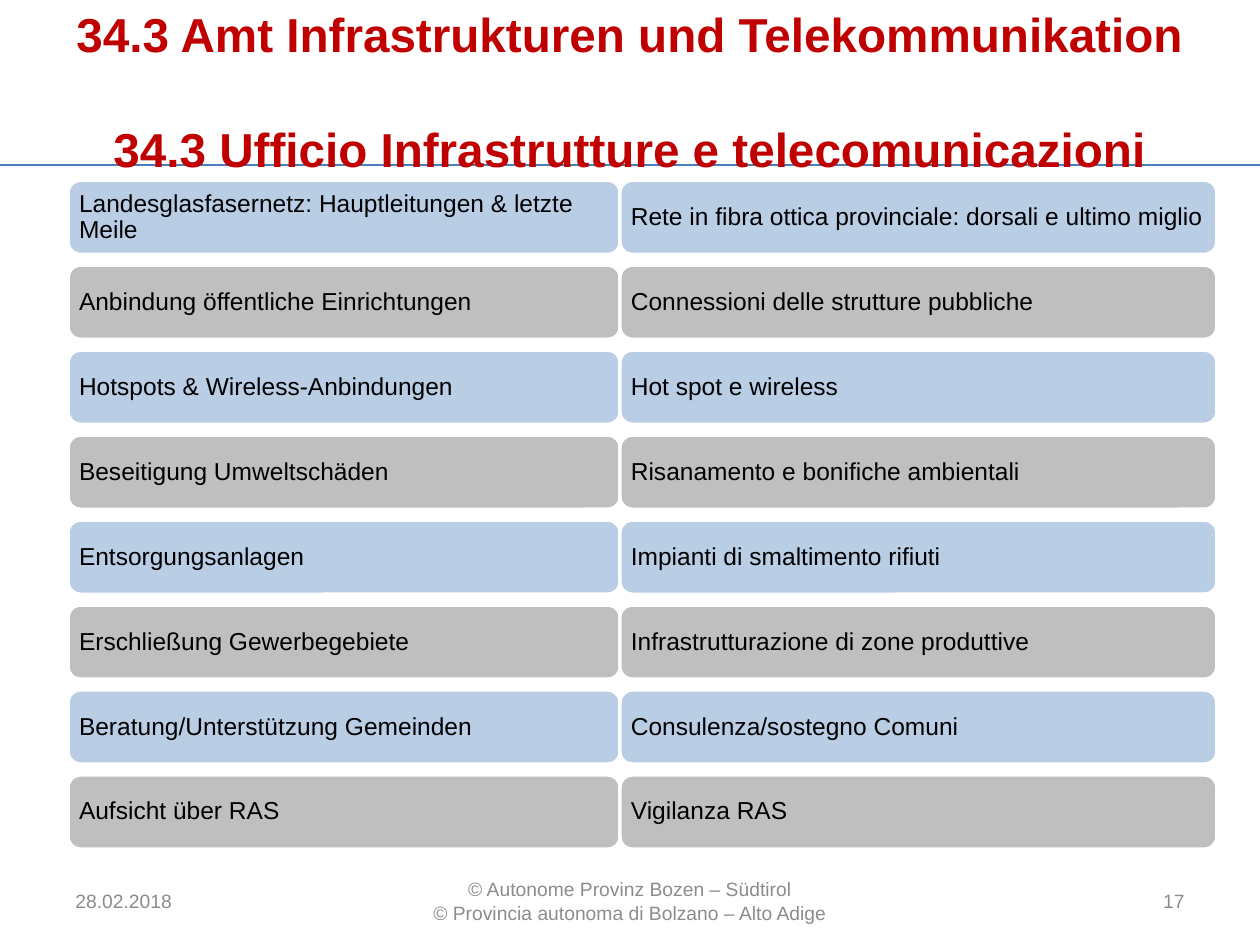
from pptx import Presentation
from pptx.dml.color import RGBColor
from pptx.enum.shapes import MSO_CONNECTOR, MSO_SHAPE
from pptx.enum.text import MSO_ANCHOR, PP_ALIGN
from pptx.oxml.ns import qn
from pptx.util import Pt
from lxml.etree import SubElement

WHITE = RGBColor(0xFF, 0xFF, 0xFF)
BLACK = RGBColor(0x00, 0x00, 0x00)
RED = RGBColor(0xC0, 0x00, 0x00)
RULE_BLUE = RGBColor(0x4B, 0x7E, 0xBC)
PALE_BLUE = RGBColor(0xB9, 0xCD, 0xE5)
GRAY = RGBColor(0xBF, 0xBF, 0xBF)
FOOTER_GRAY = RGBColor(0x8C, 0x8C, 0x8C)

TASKS = [
    ("Landesglasfasernetz: Hauptleitungen & letzte Meile",
     "Rete in fibra ottica provinciale: dorsali e ultimo miglio"),
    ("Anbindung öffentliche Einrichtungen", "Connessioni delle strutture pubbliche"),
    ("Hotspots & Wireless-Anbindungen", "Hot spot e wireless"),
    ("Beseitigung Umweltschäden", "Risanamento e bonifiche ambientali"),
    ("Entsorgungsanlagen", "Impianti di smaltimento rifiuti"),
    ("Erschließung Gewerbegebiete", "Infrastrutturazione di zone produttive"),
    ("Beratung/Unterstützung Gemeinden", "Consulenza/sostegno Comuni"),
    ("Aufsicht über RAS", "Vigilanza RAS"),
]
COLUMNS = [(38.9, 315.6), (354.2, 341.2)]
FIRST_ROW, ROW_PITCH, ROW_HEIGHT = 103, 48.55, 42.4


class SlidePainter:
    """Draws the elements of a slide in one shared style."""

    font_name = "Arial"

    def __init__(self, page):
        self.page = page

    def fill_text(self, shape, text, size, color, align=PP_ALIGN.LEFT, bold=False):
        frame = shape.text_frame
        frame.text = text
        frame.word_wrap = True
        frame.vertical_anchor = MSO_ANCHOR.MIDDLE
        for para in frame.paragraphs:
            para.alignment = align
            for span in para.runs:
                span.font.name = self.font_name
                span.font.size = Pt(size)
                span.font.bold = bold
                span.font.color.rgb = color
        return frame

    def text(self, left, top, width, height, *style, **options):
        box = self.page.shapes.add_textbox(Pt(left), Pt(top), Pt(width), Pt(height))
        return self.fill_text(box, *style, **options)

    def title(self, text):
        frame = self.text(36, 21.6, 648, 90, text, 27.2, RED, PP_ALIGN.CENTER, bold=True)
        frame.margin_left = frame.margin_right = 0
        frame.margin_bottom = Pt(33)
        frame.paragraphs[1].space_before = Pt(33.3)

    def rule(self, top):
        line = self.page.shapes.add_connector(
            MSO_CONNECTOR.STRAIGHT, Pt(0), Pt(top), Pt(720), Pt(top))
        line.line.color.rgb = RULE_BLUE
        line.line.width = Pt(1)
        SubElement(line._element.spPr, qn("a:effectLst"))

    def bar(self, left, top, width, text, fill):
        box = self.page.shapes.add_shape(
            MSO_SHAPE.ROUNDED_RECTANGLE, Pt(left), Pt(top), Pt(width), Pt(ROW_HEIGHT))
        box.shadow.inherit = False
        box.adjustments[0] = 0.17
        box.fill.solid()
        box.fill.fore_color.rgb = fill
        box.line.color.rgb = WHITE
        box.line.width = Pt(2)
        frame = self.fill_text(box, text, 14, BLACK)
        frame.margin_left = frame.margin_right = Pt(4.2)
        frame.margin_top = frame.margin_bottom = Pt(4.2)
        frame.paragraphs[0].line_spacing = 0.9


def main():
    deck = Presentation()
    deck.slide_width, deck.slide_height = Pt(720), Pt(540)
    painter = SlidePainter(deck.slides.add_slide(deck.slide_layouts[6]))

    painter.rule(94.3)
    painter.title("34.3 Amt Infrastrukturen und Telekommunikation\n"
                  "34.3 Ufficio Infrastrutture e telecomunicazioni")
    for column, (left, width) in enumerate(COLUMNS):
        for row, labels in enumerate(TASKS):
            fill = GRAY if row % 2 else PALE_BLUE
            painter.bar(left, FIRST_ROW + row * ROW_PITCH, width, labels[column], fill)

    painter.text(36, 500.4, 168, 28.8, "28.02.2018", 11, FOOTER_GRAY)
    painter.text(235.4, 500.4, 249.2, 28.8,
                 "© Autonome Provinz Bozen – Südtirol\n"
                 "© Provincia autonoma di Bolzano – Alto Adige",
                 11, FOOTER_GRAY, PP_ALIGN.CENTER)
    painter.text(516, 500.4, 168, 28.8, "17", 11, FOOTER_GRAY, PP_ALIGN.RIGHT)
    deck.save("out.pptx")


if __name__ == "__main__":
    main()
